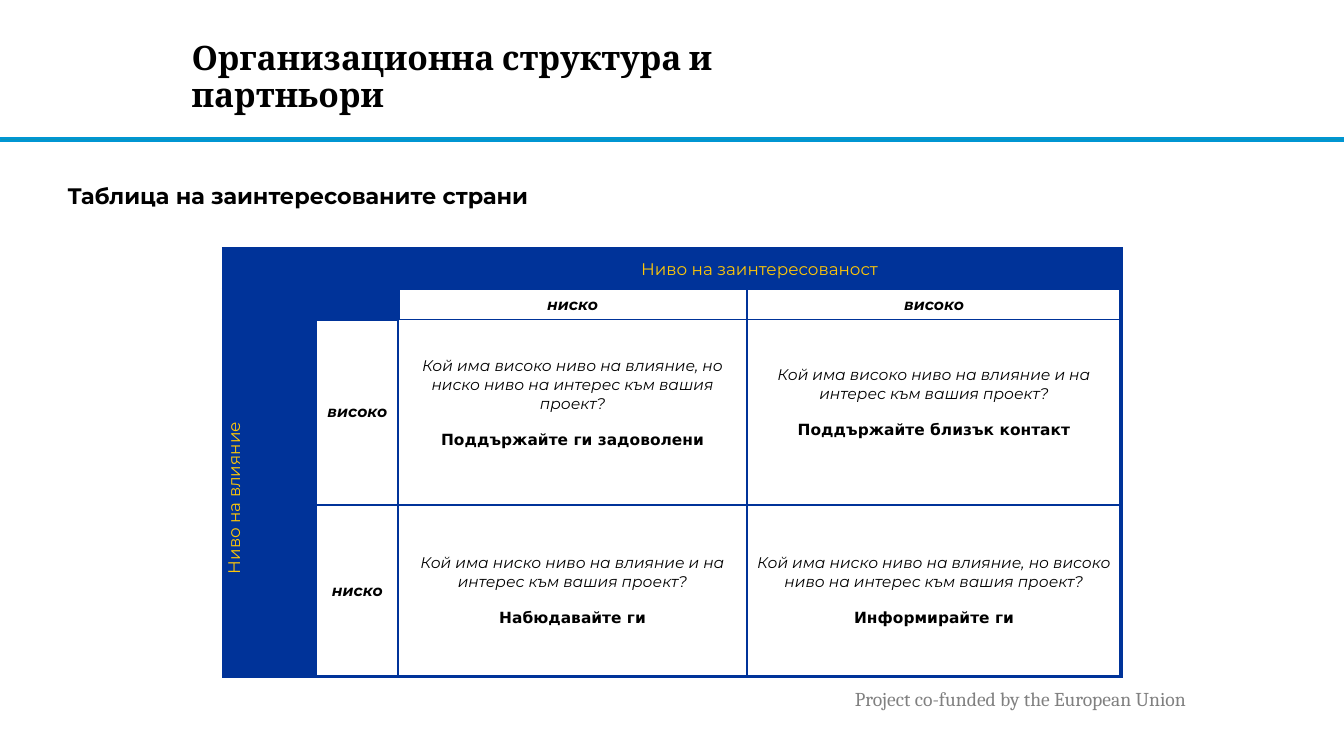
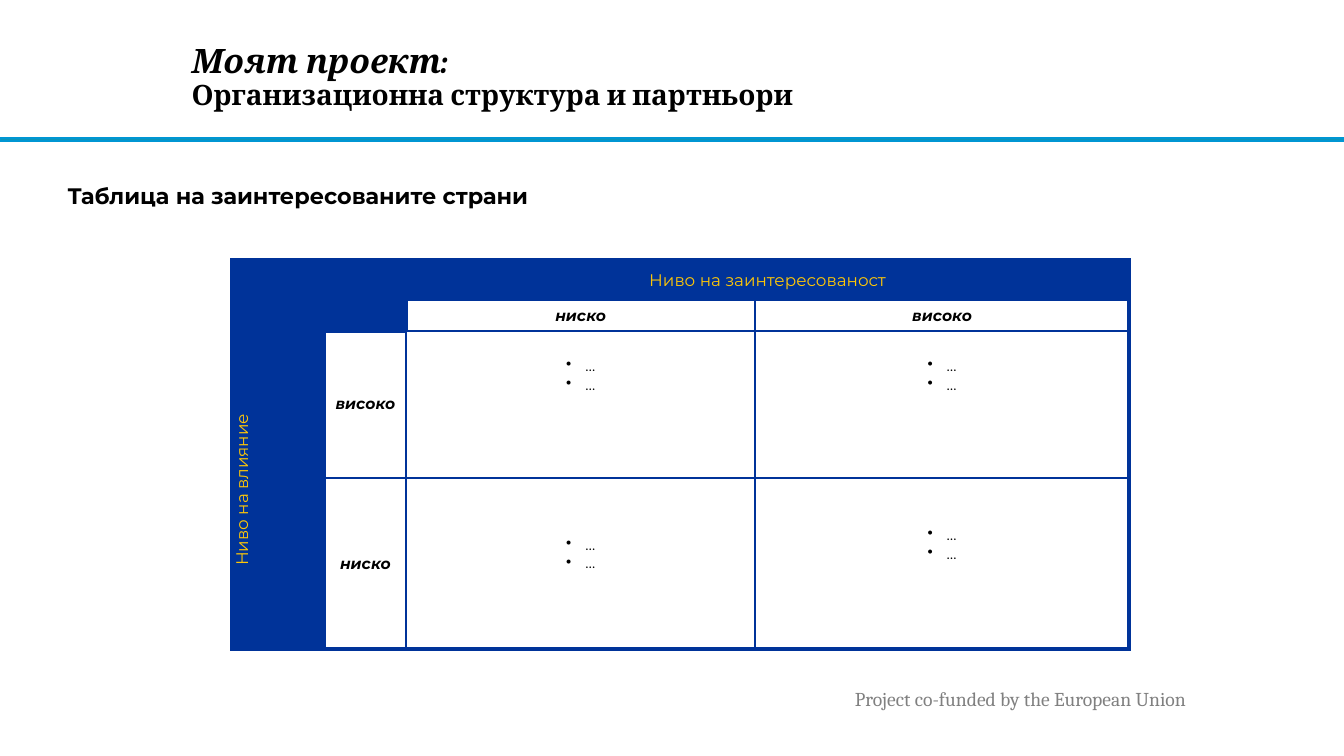
from lxml import etree
from pptx import Presentation
from pptx.dml.color import RGBColor
from pptx.enum.shapes import MSO_SHAPE
from pptx.enum.text import MSO_ANCHOR, PP_ALIGN
from pptx.oxml.ns import qn
from pptx.util import Inches, Pt

RECTANGLE = MSO_SHAPE.RECTANGLE
MIDDLE = MSO_ANCHOR.MIDDLE
CENTER = PP_ALIGN.CENTER

COLORS = {"band": "0C94B7", "band_line": "0096D3", "blue": "003399",
          "yellow": "FDC608", "black": "000000", "white": "FFFFFF",
          "footer": "808080"}
SERIF, SANS, ACTION_FONT = "Cambria", "Montserrat", "DejaVu Sans"

COLUMN_WIDTHS = [0.92, 0.81, 3.46, 3.71]
LINE_HEIGHT = 0.19  # one 11 pt line, used to raise text in a cell

# Labels by (row, column): text, size, colour, bold italic
LABELS = {
    (0, 2): ("Ниво на заинтересованост", 12, "yellow", False),
    (1, 2): ("ниско", 11, "black", True),
    (1, 3): ("високо", 11, "black", True),
    (2, 0): ("Ниво на влияние", 12, "yellow", False),
    (2, 1): ("високо", 11, "black", True),
    (3, 1): ("ниско", 11, "black", True),
}
MERGES = [((0, 0), (0, 1)), ((0, 2), (0, 3)), ((1, 0), (1, 1)), ((2, 0), (3, 0))]

# Cells with a heavy border on each side
HEAVY = {
    "a:lnL": {(0, 0), (1, 0), (2, 0), (3, 0), (1, 2)},
    "a:lnR": {(0, 2), (0, 3), (1, 3), (2, 3), (3, 3), (1, 0), (1, 1)},
    "a:lnT": {(0, 0), (0, 1), (0, 2), (0, 3), (2, 1)},
    "a:lnB": {(3, 0), (3, 1), (3, 2), (3, 3), (2, 0), (1, 1)},
}

# Quadrants: question and action, or bullets; then the lines left free below
SLIDES = [
    {"title": [("Организационна структура и", 24, False), ("партньори", 24, False)],
     "table_at": (2.22, 2.47),
     "row_heights": [0.4, 0.24, 1.84, 1.7],
     "bullets": False,
     "quadrants": {
         (2, 2): ("Кой има високо ниво на влияние, но ниско ниво на интерес към вашия проект?",
                  "Поддържайте ги задоволени", 1),
         (2, 3): ("Кой има високо ниво на влияние и на интерес към вашия проект?",
                  "Поддържайте близък контакт", 1),
         (3, 2): ("Кой има ниско ниво на влияние и на интерес към вашия проект?",
                  "Набюдавайте ги", 0),
         (3, 3): ("Кой има ниско ниво на влияние, но високо ниво на интерес към вашия проект?",
                  "Информирайте ги", 0)}},
    {"title": [("Моят проект:", 24, True),
               ("Организационна структура и партньори", 20, False)],
     "table_at": (2.3, 2.58),
     "row_heights": [0.4, 0.24, 1.46, 1.7],
     "bullets": True,
     "quadrants": {(2, 2): ("…", "…", 3), (2, 3): ("…", "…", 3),
                   (3, 2): ("…", "…", 1), (3, 3): ("…", "…", 2)}},
]


def style(paragraph, size, font, color="black", bold=False, italic=False):
    for run in paragraph.runs:
        run.font.size = Pt(size)
        run.font.name = font
        run.font.bold = bold
        run.font.italic = italic
        run.font.color.rgb = RGBColor.from_string(COLORS[color])


def add_text(slide, left, top, width, height, lines, inset):
    frame = slide.shapes.add_textbox(Inches(left), Inches(top), Inches(width),
                                     Inches(height)).text_frame
    frame.word_wrap = True
    frame.margin_left = frame.margin_right = Inches(inset[0])
    frame.margin_top = frame.margin_bottom = Inches(inset[1])
    frame.text = "\n".join(lines)
    return frame


prs = Presentation()
prs.slide_width, prs.slide_height = Inches(13.33), Inches(7.5)

for content in SLIDES:
    slide = prs.slides.add_slide(prs.slide_layouts[6])

    # Band under the title
    band = slide.shapes.add_shape(RECTANGLE, 0, Inches(1.37), prs.slide_width, Inches(0.03))
    band.shadow.inherit = False
    band.fill.solid()
    band.fill.fore_color.rgb = RGBColor.from_string(COLORS["band"])
    band.line.color.rgb = RGBColor.from_string(COLORS["band_line"])
    band.line.width = Pt(1)

    # Footer, subtitle and title
    footer = add_text(slide, 8.38, 6.77, 4.88, 0.34,
                      ["Project co-funded by the European Union"], (0.1, 0.05))
    style(footer.paragraphs[0], 14, SERIF, "footer")
    subtitle = add_text(slide, 0.67, 1.76, 11.31, 0.5,
                        ["Таблица на заинтересованите страни"], (0, 0.05))
    style(subtitle.paragraphs[0], 16, SANS, bold=True)
    title = add_text(slide, 1.9, 0.18, 7.54, 1.19,
                     [text for text, _, _ in content["title"]], (0, 0))
    title.vertical_anchor = MIDDLE
    for paragraph, (_, size, italic) in zip(title.paragraphs, content["title"]):
        paragraph.line_spacing = 0.9
        style(paragraph, size, SERIF, bold=True, italic=italic)

    # Stakeholder table
    left, top = content["table_at"]
    heights = content["row_heights"]
    matrix = slide.shapes.add_table(4, 4, Inches(left), Inches(top),
                                    Inches(sum(COLUMN_WIDTHS)), Inches(sum(heights))).table
    matrix.first_row = matrix.horz_banding = False
    for column, width in zip(matrix.columns, COLUMN_WIDTHS):
        column.width = Inches(width)
    for row, height in zip(matrix.rows, heights):
        row.height = Inches(height)

    # Borders, fills and margins of all cells
    for r in range(4):
        for c in range(4):
            cell = matrix.cell(r, c)
            cell.vertical_anchor = MIDDLE
            cell.margin_left = cell.margin_right = Inches(0.06)
            cell.margin_top = cell.margin_bottom = 0
            cell_props = cell._tc.get_or_add_tcPr()
            for side, heavy_cells in HEAVY.items():
                border = etree.SubElement(cell_props, qn(side),
                                          w=str(Pt(3 if (r, c) in heavy_cells else 1.5)))
                border_fill = etree.SubElement(border, qn("a:solidFill"))
                etree.SubElement(border_fill, qn("a:srgbClr"), val=COLORS["blue"])
            is_blue = r == 0 or c == 0 or (r, c) == (1, 1)
            cell.fill.solid()
            cell.fill.fore_color.rgb = RGBColor.from_string(
                COLORS["blue" if is_blue else "white"])
    for first, last in MERGES:
        matrix.cell(*first).merge(matrix.cell(*last))

    # Axis labels
    for position, (text, size, color, strong) in LABELS.items():
        label = matrix.cell(*position).text_frame.paragraphs[0]
        label.text = text
        label.alignment = CENTER
        style(label, size, SANS, color, bold=strong, italic=strong)
    matrix.cell(2, 0)._tc.get_or_add_tcPr().set("vert", "vert270")

    # Quadrants
    for position, (question, action, free_lines) in content["quadrants"].items():
        cell = matrix.cell(*position)
        cell.margin_bottom = Inches(free_lines * LINE_HEIGHT)
        cell.text_frame.text = f"{question}\n{action}"
        question_line, action_line = cell.text_frame.paragraphs
        for paragraph in (question_line, action_line):
            paragraph.alignment = CENTER
            if content["bullets"]:
                para_props = paragraph._p.get_or_add_pPr()
                para_props.set("marL", str(Inches(0.19)))
                para_props.set("indent", str(-Inches(0.19)))
                etree.SubElement(para_props, qn("a:buChar"), char="•")
                style(paragraph, 11, SANS)
        if not content["bullets"]:
            style(question_line, 11, SANS, italic=True)
            style(action_line, 11, ACTION_FONT, bold=True)
            action_line.space_before = Pt(13)

prs.save("out.pptx")
